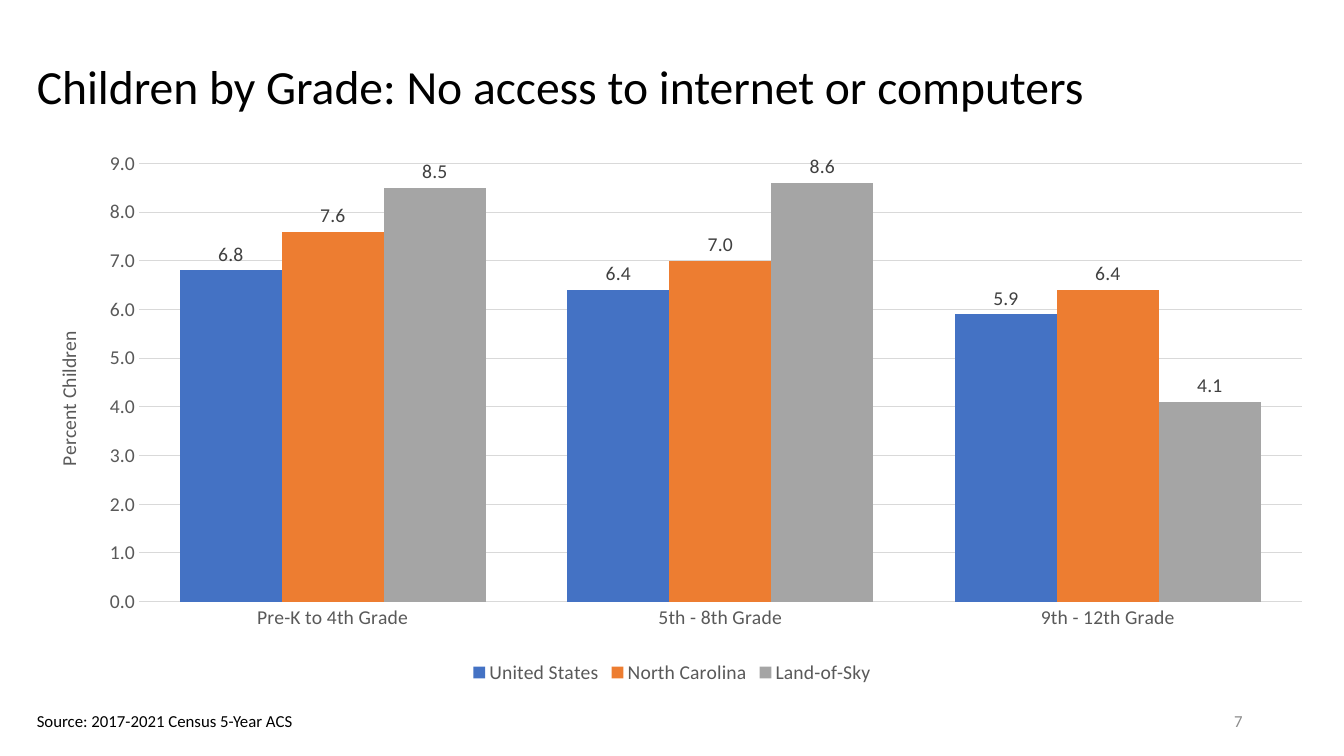
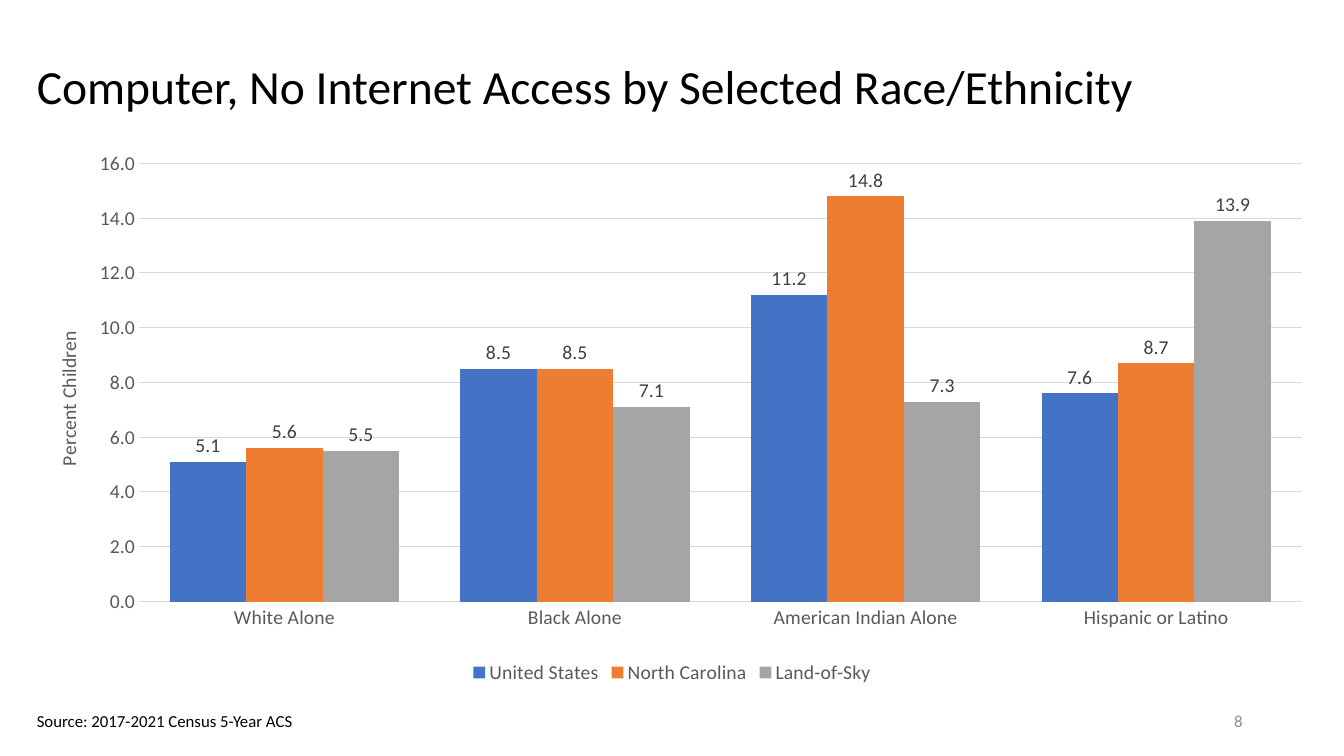
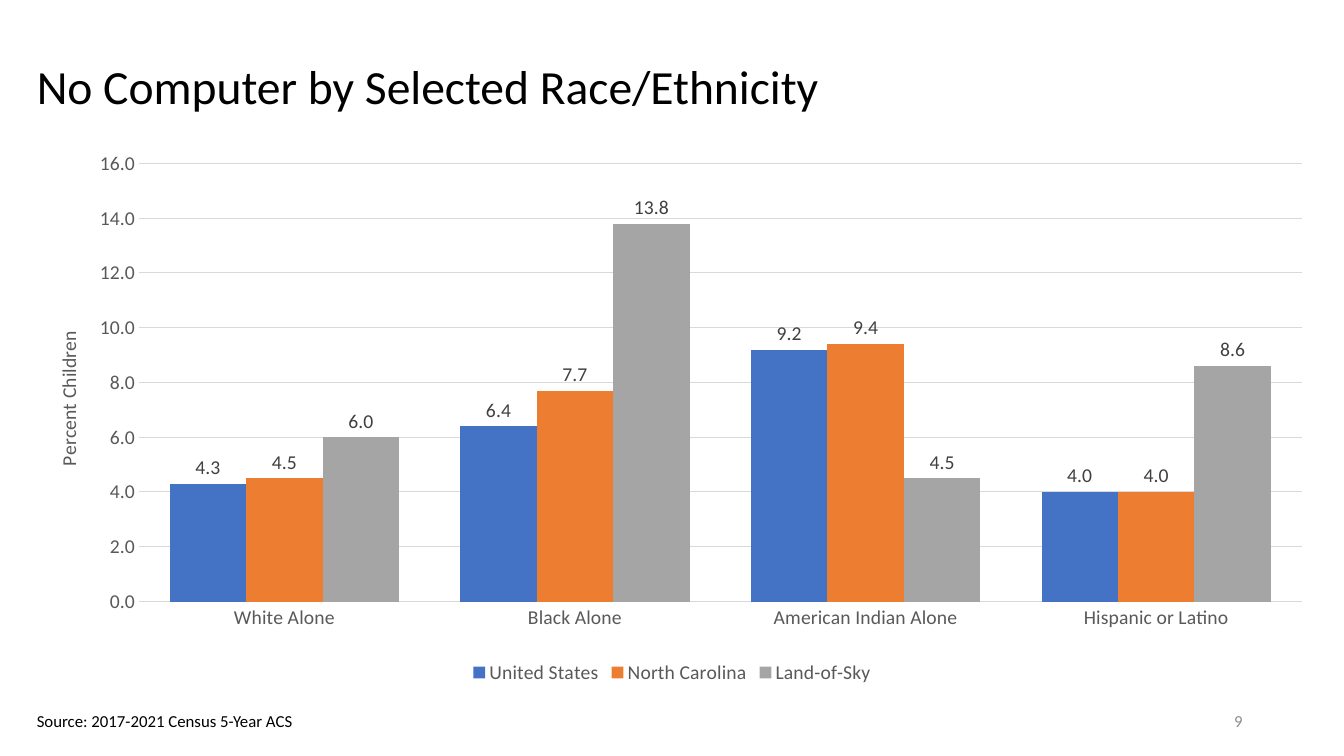
from lxml import etree
from pptx import Presentation
from pptx import util as u
from pptx.chart import data as chart_data
from pptx.dml import color as dml
from pptx.enum import chart as charts, text
from pptx.oxml import ns

WIDTH, HEIGHT = u.Inches(13.33), u.Inches(7.5)
FONT = "Calibri"
BLACK, AXIS_GREY, LABEL_GREY, NUMBER_GREY, RULE_GREY = "000000", "595959", "404040", "8C8C8C", "D9D9D9"
NUMBER_FORMAT = "#,##0.0"
LEFT = 0.02

FRAMES = {
    "title": {"box": (LEFT, 0.045, 0.957, 0.145), "size": 34, "color": BLACK,
              "frame": {"word_wrap": True, "vertical_anchor": text.MSO_ANCHOR.MIDDLE},
              "paragraph": {"line_spacing": 0.9}},
    "number": {"box": (0.707, 0.927, 0.225, 0.053), "size": 12, "color": NUMBER_GREY,
               "frame": {"word_wrap": True, "vertical_anchor": text.MSO_ANCHOR.MIDDLE},
               "paragraph": {"alignment": text.PP_ALIGN.RIGHT}},
    "source": {"box": (LEFT, 0.933, 0.209, 0.04), "size": 12, "color": BLACK,
               "frame": {"word_wrap": False, "auto_size": text.MSO_AUTO_SIZE.SHAPE_TO_FIT_TEXT},
               "paragraph": {"alignment": text.PP_ALIGN.LEFT}},
}
CHART_BOX = (LEFT, 0.191, 0.96, 0.72)
PLOT_LAYOUT = {"layoutTarget": "inner", "xMode": "edge", "yMode": "edge",
               "x": 0.087, "y": 0.035, "w": 0.901, "h": 0.805}
AXIS_TITLE_LAYOUT = {"xMode": "edge", "yMode": "edge", "x": 0.019, "y": 0.336}

REGIONS = {"United States": "4472C4", "North Carolina": "ED7D31", "Land-of-Sky": "A5A5A5"}
GRADES = ["Pre-K to 4th Grade", "5th - 8th Grade", "9th - 12th Grade"]
ETHNICITIES = ["White Alone", "Black Alone", "American Indian Alone", "Hispanic or Latino"]
SLIDES = [
    ("Children by Grade: No access to internet or computers", GRADES, 9, 1,
     [(6.8, 6.4, 5.9), (7.6, 7, 6.4), (8.5, 8.6, 4.1)]),
    ("Computer, No Internet Access by Selected Race/Ethnicity", ETHNICITIES, 16, 2,
     [(5.1, 8.5, 11.2, 7.6), (5.6, 8.5, 14.8, 8.7), (5.5, 7.1, 7.3, 13.9)]),
    ("No Computer by Selected Race/Ethnicity", ETHNICITIES, 16, 2,
     [(4.3, 6.4, 9.2, 4), (4.5, 7.7, 9.4, 4), (6, 13.8, 4.5, 8.6)]),
]
FIRST_NUMBER = 7


def paint(target, hex_color, **settings):
    target.rgb = dml.RGBColor.from_string(hex_color)


def style_font(font, size, hex_color):
    for name, value in {"name": FONT, "size": u.Pt(size), "bold": False}.items():
        setattr(font, name, value)
    font.color.rgb = dml.RGBColor.from_string(hex_color)


presentation = Presentation()
presentation.slide_width, presentation.slide_height = WIDTH, HEIGHT

for number, (title, categories, maximum, step, rows) in enumerate(SLIDES, FIRST_NUMBER):
    slide = presentation.slides.add_slide(presentation.slide_layouts[6])
    wording = {"title": title, "number": str(number), "source": "Source: 2017-2021 Census 5-Year ACS"}
    for role, style in FRAMES.items():
        x, y, w, h = style["box"]
        shape = slide.shapes.add_textbox(int(x * WIDTH), int(y * HEIGHT), int(w * WIDTH), int(h * HEIGHT))
        paragraph = shape.text_frame.paragraphs[0]
        for target, values in ((shape.text_frame, style["frame"]), (paragraph, style["paragraph"])):
            for name, value in values.items():
                setattr(target, name, value)
        run = paragraph.add_run()
        run.text = wording[role]
        style_font(run.font, style["size"], style["color"])

    table = chart_data.CategoryChartData(number_format=NUMBER_FORMAT)
    table.categories = categories
    for region, values in zip(REGIONS, rows):
        table.add_series(region, values)
    x, y, w, h = CHART_BOX
    chart = slide.shapes.add_chart(
        charts.XL_CHART_TYPE.COLUMN_CLUSTERED,
        int(x * WIDTH), int(y * HEIGHT), int(w * WIDTH), int(h * HEIGHT), table).chart
    style_font(chart.font, 14, AXIS_GREY)
    chart.has_title = False
    chart.has_legend = True
    chart.legend.position = charts.XL_LEGEND_POSITION.BOTTOM
    chart.legend.include_in_layout = False
    style_font(chart.legend.font, 14, AXIS_GREY)

    plot = chart.plots[0]
    for name, value in {"gap_width": 80, "overlap": 0, "vary_by_categories": False}.items():
        setattr(plot, name, value)
    for series, fill_color in zip(plot.series, REGIONS.values()):
        series.format.fill.solid()
        series.format.fill.fore_color.rgb = dml.RGBColor.from_string(fill_color)
        label_values = {"show_value": True, "number_format": NUMBER_FORMAT,
                        "number_format_is_linked": False,
                        "position": charts.XL_LABEL_POSITION.OUTSIDE_END}
        for name, value in label_values.items():
            setattr(series.data_labels, name, value)
        style_font(series.data_labels.font, 14, LABEL_GREY)

    category_axis, value_axis = chart.category_axis, chart.value_axis
    for axis in (category_axis, value_axis):
        axis.major_tick_mark = axis.minor_tick_mark = charts.XL_TICK_MARK.NONE
        style_font(axis.tick_labels.font, 14, AXIS_GREY)
    for name, value in {"minimum_scale": 0, "maximum_scale": maximum, "major_unit": step,
                        "has_major_gridlines": True}.items():
        setattr(value_axis, name, value)
    value_axis.tick_labels.number_format = NUMBER_FORMAT
    value_axis.tick_labels.number_format_is_linked = False
    value_axis.format.line.fill.background()
    for line in (category_axis.format.line, value_axis.major_gridlines.format.line):
        line.width = u.Pt(0.75)
        line.color.rgb = dml.RGBColor.from_string(RULE_GREY)
    axis_run = value_axis.axis_title.text_frame.paragraphs[0].add_run()
    axis_run.text = "Percent Children"
    style_font(axis_run.font, 14, AXIS_GREY)

    plot_area = chart._chartSpace.xpath("c:chart/c:plotArea")[0]
    axis_title = plot_area.xpath("c:valAx/c:title")[0]
    for parent, position, values in ((plot_area, 0, PLOT_LAYOUT), (axis_title, 1, AXIS_TITLE_LAYOUT)):
        for old_layout in parent.findall(ns.qn("c:layout")):
            parent.remove(old_layout)
        layout = etree.Element(ns.qn("c:layout"))
        manual = etree.SubElement(layout, ns.qn("c:manualLayout"))
        for name, value in values.items():
            etree.SubElement(manual, ns.qn("c:" + name)).set("val", str(value))
        parent.insert(position, layout)

presentation.save("out.pptx")
